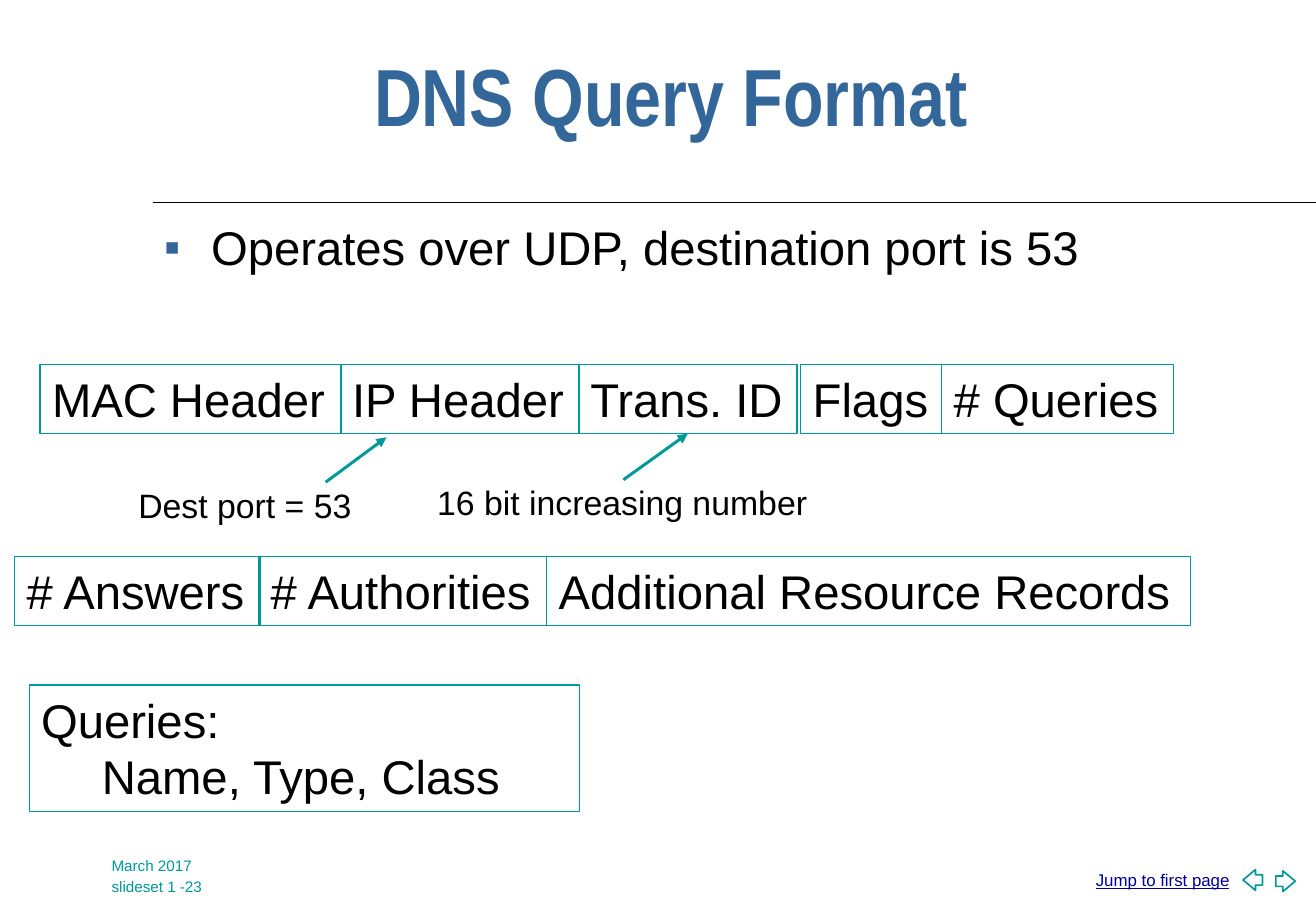
from dataclasses import dataclass

import lxml.etree
import pptx
import pptx.dml.color
import pptx.enum.shapes
import pptx.enum.text
import pptx.oxml.ns
import pptx.util
from pptx.util import Inches

COLORS = {
    "teal": "009999",
    "blue": "336699",
    "ink": "010000",
    "link": "000099",
    "white": "FFFFFF",
}
SHAPES = pptx.enum.shapes.MSO_SHAPE
ANCHOR = pptx.enum.text.MSO_ANCHOR
FIELD_HEIGHT = 0.57


@dataclass
class Label:
    text: str
    left: float
    top: float
    width: float
    height: float
    size: float
    color: str = "ink"
    font: str = "Arial"
    wrap: bool = True


@dataclass
class Field:
    text: str
    left: float
    width: float


@dataclass
class FieldRow:
    top: float
    fields: list[Field]


@dataclass
class Arrow:
    start: tuple[float, float]
    end: tuple[float, float]


HEADING = Label("DNS Query Format", 2.98, 0.25, 7.22, 1.25, 48, "blue", "Arial Narrow")
TRANSPORT = Label("Operates over UDP, destination port is 53", 1.26, 1.75, 9.3, 0.67, 28)
JUMP = Label("Jump to first page", 8.92, 7.11, 1.33, 0.39, 10, "link")
FOOTERS = [
    Label("March 2017", 0.82, 7, 1.26, 0.17, 9, "teal"),
    Label("slideset 1 -23", 0.82, 7.17, 1, 0.17, 9, "teal"),
]
CAPTIONS = [
    Label("16 bit increasing number", 3.5, 3.92, 3.27, 0.44, 20, wrap=False),
    Label("Dest port = 53", 1.04, 3.94, 1.97, 0.44, 20, wrap=False),
]
FIELD_ROWS = [
    FieldRow(3, [
        Field("MAC Header", 0.33, 2.48),
        Field("IP Header", 2.8, 1.97),
        Field("Trans. ID", 4.76, 1.8),
        Field("Flags", 6.59, 1.16),
        Field("# Queries", 7.75, 1.91),
    ]),
    FieldRow(4.58, [
        Field("# Answers", 0.12, 2.02),
        Field("# Authorities", 2.13, 2.37),
        Field("Additional Resource Records", 4.5, 5.3),
    ]),
]
QUERIES = Label("Queries:\n\tName, Type, Class", 0.24, 5.64, 4.53, 1.04, 28, wrap=False)
ID_ARROW = Arrow((5.13, 3.95), (5.66, 3.57))
PORT_ARROW = Arrow((2.68, 3.97), (3.18, 3.6))


def rgb(name: str) -> pptx.dml.color.RGBColor:
    return pptx.dml.color.RGBColor.from_string(COLORS[name])


def write_label(shape, label: Label) -> None:
    frame = shape.text_frame
    frame.text = label.text
    frame.word_wrap = label.wrap
    frame.vertical_anchor = ANCHOR.TOP
    for paragraph in frame.paragraphs:
        paragraph.alignment = pptx.enum.text.PP_ALIGN.LEFT
        paragraph.font.name = label.font
        paragraph.font.size = pptx.util.Pt(label.size)
        paragraph.font.color.rgb = rgb(label.color)


def add_label(slide, label: Label):
    box = slide.shapes.add_textbox(
        Inches(label.left), Inches(label.top), Inches(label.width), Inches(label.height))
    write_label(box, label)
    return box


def add_outlined(slide, preset, left: float, top: float, width: float, height: float,
                 line_width: float = 0.75):
    shape = slide.shapes.add_shape(
        preset, Inches(left), Inches(top), Inches(width), Inches(height))
    shape.shadow.inherit = False
    shape.fill.background()
    shape.line.color.rgb = rgb("teal")
    shape.line.width = pptx.util.Pt(line_width)
    return shape


def add_field(slide, label: Label):
    box = add_outlined(slide, SHAPES.RECTANGLE,
                       label.left, label.top, label.width, label.height)
    write_label(box, label)
    return box


def add_line(slide, start: tuple[float, float], end: tuple[float, float],
             color: str, width: float):
    line = slide.shapes.add_connector(
        pptx.enum.shapes.MSO_CONNECTOR.STRAIGHT, *map(Inches, start + end))
    line.line.color.rgb = rgb(color)
    line.line.width = pptx.util.Pt(width)
    lxml.etree.SubElement(line._element.spPr, pptx.oxml.ns.qn("a:effectLst"))
    return line


def add_arrow(slide, arrow: Arrow):
    line = add_line(slide, arrow.start, arrow.end, "teal", 1.75)
    head = lxml.etree.SubElement(line.line._get_or_add_ln(), pptx.oxml.ns.qn("a:tailEnd"))
    head.set("type", "triangle")
    return line


def add_square_bullet(paragraph) -> None:
    properties = paragraph._p.get_or_add_pPr()
    properties.set("marL", str(Inches(0.38)))
    properties.set("indent", str(Inches(-0.38)))
    color = lxml.etree.SubElement(properties, pptx.oxml.ns.qn("a:buClr"))
    lxml.etree.SubElement(color, pptx.oxml.ns.qn("a:srgbClr")).set("val", COLORS["blue"])
    for tag, key, value in (("a:buSzPct", "val", "50000"),
                            ("a:buFont", "typeface", "Arial"),
                            ("a:buChar", "char", "■")):
        lxml.etree.SubElement(properties, pptx.oxml.ns.qn(tag)).set(key, value)
    # Default run properties must come after the bullet.
    properties.append(properties.find(pptx.oxml.ns.qn("a:defRPr")))


def add_navigation(slide) -> None:
    add_label(slide, JUMP).text_frame.paragraphs[0].font.underline = True
    for preset, left, top in ((SHAPES.LEFT_ARROW, 10.23, 7.16),
                              (SHAPES.RIGHT_ARROW, 10.5, 7.17)):
        button = add_outlined(slide, preset, left, top, 0.16, 0.17, 1)
        button.fill.solid()
        button.fill.fore_color.rgb = rgb("white")
        button.adjustments[1] = 0.64


def main() -> None:
    deck = pptx.Presentation()
    deck.slide_width, deck.slide_height = Inches(10.83), Inches(7.5)
    slide = deck.slides.add_slide(deck.slide_layouts[6])

    add_navigation(slide)
    add_line(slide, (1.26, 1.67), (10.83, 1.67), "ink", 0.75)
    heading = add_label(slide, HEADING).text_frame
    heading.vertical_anchor = ANCHOR.MIDDLE
    heading.paragraphs[0].line_spacing = 0.7
    heading.paragraphs[0].font.bold = True
    add_square_bullet(add_label(slide, TRANSPORT).text_frame.paragraphs[0])

    boxes = {}
    for row in FIELD_ROWS:
        for field in row.fields:
            boxes[field.text] = add_field(slide, Label(
                field.text, field.left, row.top, field.width, FIELD_HEIGHT, 28, wrap=False))
    add_field(slide, QUERIES)

    add_arrow(slide, ID_ARROW).end_connect(boxes["Trans. ID"], 2)
    add_arrow(slide, PORT_ARROW)
    for label in CAPTIONS + FOOTERS:
        add_label(slide, label)

    deck.save("out.pptx")


if __name__ == "__main__":
    main()
